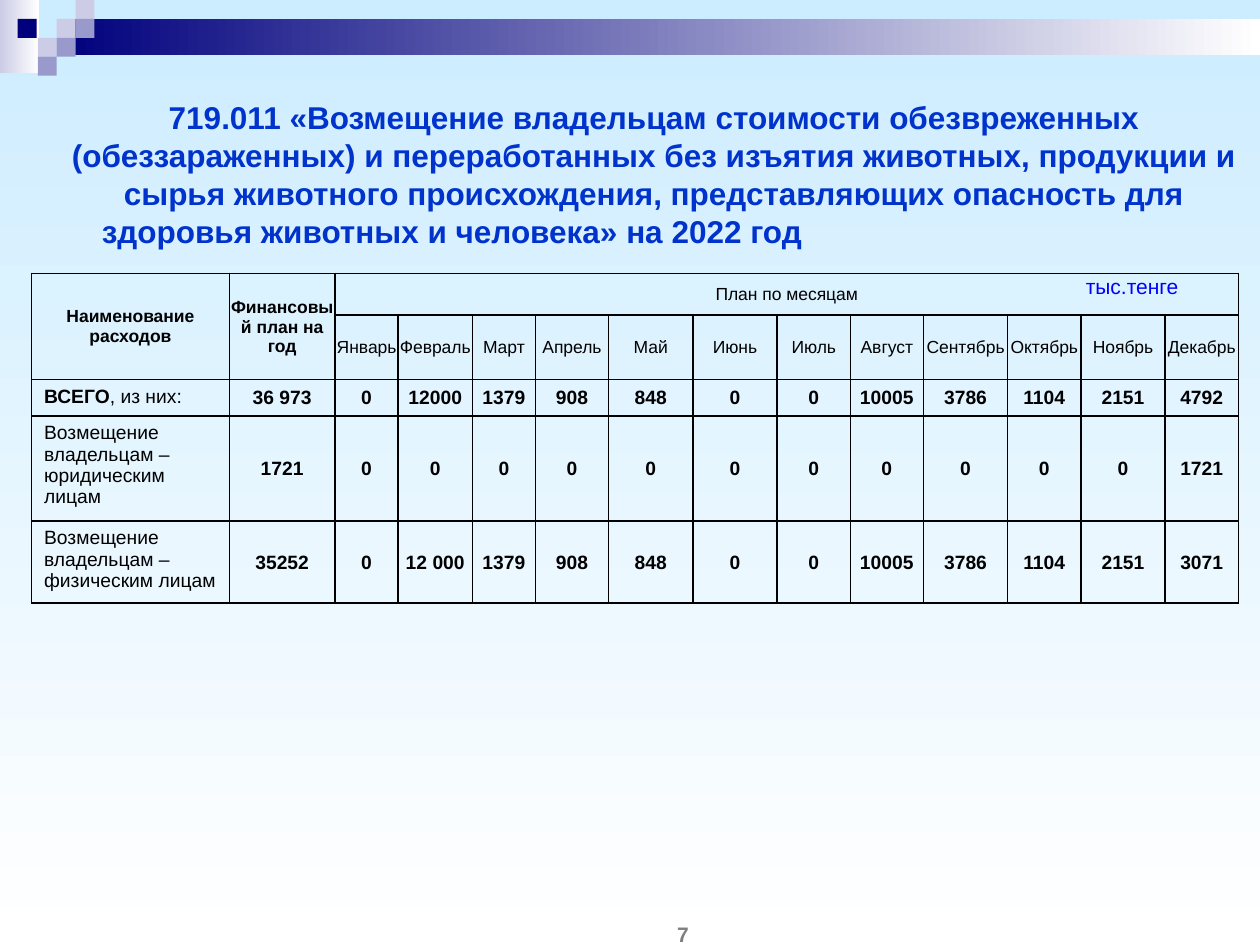
import pptx
import pptx.dml.color
import pptx.enum.shapes
import pptx.enum.text
import pptx.oxml.ns
import pptx.util
from lxml import etree
from pptx.dml.color import RGBColor
from pptx.util import Inches

SKY = RGBColor(0xCC, 0xEC, 0xFF)
WHITE = RGBColor(0xFF, 0xFF, 0xFF)
BLACK = RGBColor(0, 0, 0)
NAVY = RGBColor(0, 0, 0x7D)
LAVENDER = RGBColor(0xCC, 0xCC, 0xE6)
VIOLET = RGBColor(0x99, 0x99, 0xCC)
TITLE_BLUE = RGBColor(0, 0x33, 0xCC)
UNIT_BLUE = RGBColor(0, 0, 0xFF)
GRAY = RGBColor(0x7F, 0x7F, 0x7F)

CENTER = pptx.enum.text.PP_ALIGN.CENTER
LEFT = pptx.enum.text.PP_ALIGN.LEFT
MIDDLE = pptx.enum.text.MSO_ANCHOR.MIDDLE
TOP = pptx.enum.text.MSO_ANCHOR.TOP


def set_gradient(fill, start, end, angle):
    fill.gradient()
    fill.gradient_angle = angle
    for stop, color in zip(fill.gradient_stops, (start, end)):
        stop.color.rgb = color


def style_paragraph(paragraph, size, color, bold, alignment=CENTER):
    paragraph.alignment = alignment
    paragraph.font.name = "Arial"
    paragraph.font.size = pptx.util.Pt(size)
    paragraph.font.bold = bold
    paragraph.font.color.rgb = color


presentation = pptx.Presentation()
presentation.slide_width = Inches(10)
presentation.slide_height = Inches(7.5)
slide = presentation.slides.add_slide(presentation.slide_layouts[6])
set_gradient(slide.background.fill, SKY, WHITE, 270)

# Header: two gradient bars, then a mosaic of small squares
header_parts = [
    (0, 0, 0.31, 0.58, LAVENDER, WHITE),
    (0.45, 0.15, 9.55, 0.29, NAVY, WHITE),
]
squares = [
    (0.45, 0.15, LAVENDER), (0.6, 0, LAVENDER), (0.6, 0.15, VIOLET),
    (0.3, 0.3, LAVENDER), (0.14, 0.15, NAVY), (0.45, 0.3, VIOLET),
    (0.3, 0.45, VIOLET),
]
header_parts += [(left, top, 0.15, 0.15, color, None) for left, top, color in squares]
for left, top, width, height, color, end_color in header_parts:
    shape = slide.shapes.add_shape(
        pptx.enum.shapes.MSO_SHAPE.RECTANGLE,
        Inches(left), Inches(top), Inches(width), Inches(height))
    shape.shadow.inherit = False
    shape.line.fill.background()
    if end_color is None:
        shape.fill.solid()
        shape.fill.fore_color.rgb = color
    else:
        set_gradient(shape.fill, color, end_color, 0)

# Title: centred lines, with the last line set to the left
title = slide.shapes.add_textbox(Inches(0.38), Inches(1.25), Inches(9.62), Inches(0.26))
title.text_frame.word_wrap = True
title.text_frame.vertical_anchor = MIDDLE
title.text_frame.text = (
    "719.011 «Возмещение владельцам стоимости обезвреженных (обеззараженных) "
    "и переработанных без изъятия животных, продукции и сырья животного "
    "происхождения, представляющих опасность для\n"
    "здоровья животных и человека» на 2022 год")
for paragraph, alignment in zip(title.text_frame.paragraphs, (CENTER, LEFT)):
    style_paragraph(paragraph, 18, TITLE_BLUE, True, alignment)
title.text_frame.paragraphs[1]._p.get_or_add_pPr().set("marL", str(Inches(0.33)))

# Table of monthly payments
months = ["Январь", "Февраль", "Март", "Апрель", "Май", "Июнь", "Июль", "Август",
          "Сентябрь", "Октябрь", "Ноябрь", "Декабрь"]
rows = [
    ["Наименование расходов", "Финансовый план на год", "План по месяцам"] + [""] * 11,
    ["", ""] + months,
    ["ВСЕГО, из них:", "36 973", "0", "12000", "1379", "908", "848", "0", "0",
     "10005", "3786", "1104", "2151", "4792"],
    ["Возмещение владельцам – юридическим лицам", "1721"] + ["0"] * 11 + ["1721"],
    ["Возмещение владельцам – физическим лицам", "35252", "0", "12 000", "1379",
     "908", "848", "0", "0", "10005", "3786", "1104", "2151", "3071"],
]
column_widths = [1.57, 0.84, 0.5, 0.59, 0.5, 0.58, 0.67, 0.67, 0.58, 0.58, 0.67,
                 0.58, 0.67, 0.58]
# The last two rows grow to fit their text
row_heights = [0.33, 0.5, 0.29, 0.29, 0.29]
frame = slide.shapes.add_table(
    len(rows), len(column_widths), Inches(0.25), Inches(2.17),
    Inches(sum(column_widths)), Inches(2.51))
table = frame.table
table.first_row = False
table.horz_banding = False
for column, width in zip(table.columns, column_widths):
    column.width = Inches(width)
for row, height in zip(table.rows, row_heights):
    row.height = Inches(height)
frame.height = Inches(2.51)
table.cell(0, 0).merge(table.cell(1, 0))
table.cell(0, 1).merge(table.cell(1, 1))
table.cell(0, 2).merge(table.cell(0, 13))

for row_index, texts in enumerate(rows):
    for column_index, text in enumerate(texts):
        cell = table.cell(row_index, column_index)
        is_header = row_index < 2
        is_name = column_index == 0
        cell.vertical_anchor = TOP if is_name and not is_header else MIDDLE
        cell.margin_left = cell.margin_right = Inches(0.1 if is_name else 0)
        cell.margin_top = Inches(0.05 if is_name else 0.01)
        cell.margin_bottom = Inches(0.05 if is_name else 0)

        cell_properties = cell._tc.get_or_add_tcPr()
        for side in ("a:lnL", "a:lnR", "a:lnT", "a:lnB"):
            border = etree.SubElement(
                cell_properties, pptx.oxml.ns.qn(side), w=str(pptx.util.Pt(1)))
            border_fill = etree.SubElement(border, pptx.oxml.ns.qn("a:solidFill"))
            etree.SubElement(border_fill, pptx.oxml.ns.qn("a:srgbClr"), val=str(BLACK))
        cell.fill.background()

        paragraph = cell.text_frame.paragraphs[0]
        # Bold: the two merged header cells and all the amounts
        bold = column_index < 2 if is_header else not is_name
        style_paragraph(paragraph, 10 if is_header else 11, BLACK, bold,
                        LEFT if is_name and not is_header else CENTER)
        if text.startswith("ВСЕГО"):
            total, rest = text.split(",")
            total_run = paragraph.add_run()
            total_run.text = total
            total_run.font.bold = True
            paragraph.add_run().text = "," + rest
        elif text:
            paragraph.add_run().text = text

# Unit label and slide number
labels = [
    ("тыс.тенге", 8.16, 2.17, 1.65, 0.2, UNIT_BLUE, False, TOP),
    ("7", 4.42, 7.32, 2, 0.18, GRAY, True, MIDDLE),
]
for text, left, top, width, height, color, bold, anchor in labels:
    label = slide.shapes.add_textbox(
        Inches(left), Inches(top), Inches(width), Inches(height))
    text_frame = label.text_frame
    text_frame.word_wrap = True
    text_frame.vertical_anchor = anchor
    text_frame.margin_left = text_frame.margin_right = 0
    text_frame.margin_top = text_frame.margin_bottom = 0
    text_frame.text = text
    style_paragraph(text_frame.paragraphs[0], 12, color, bold)

presentation.save("out.pptx")
